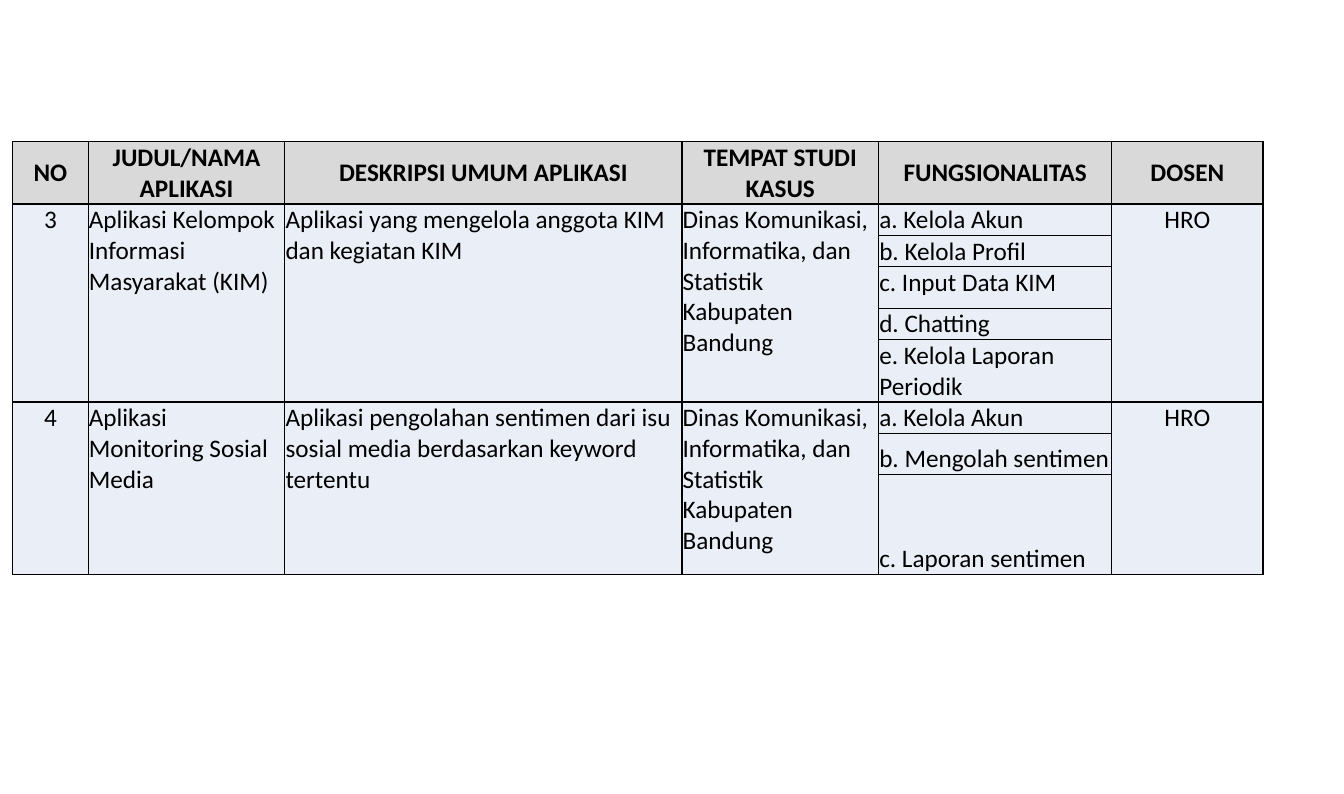
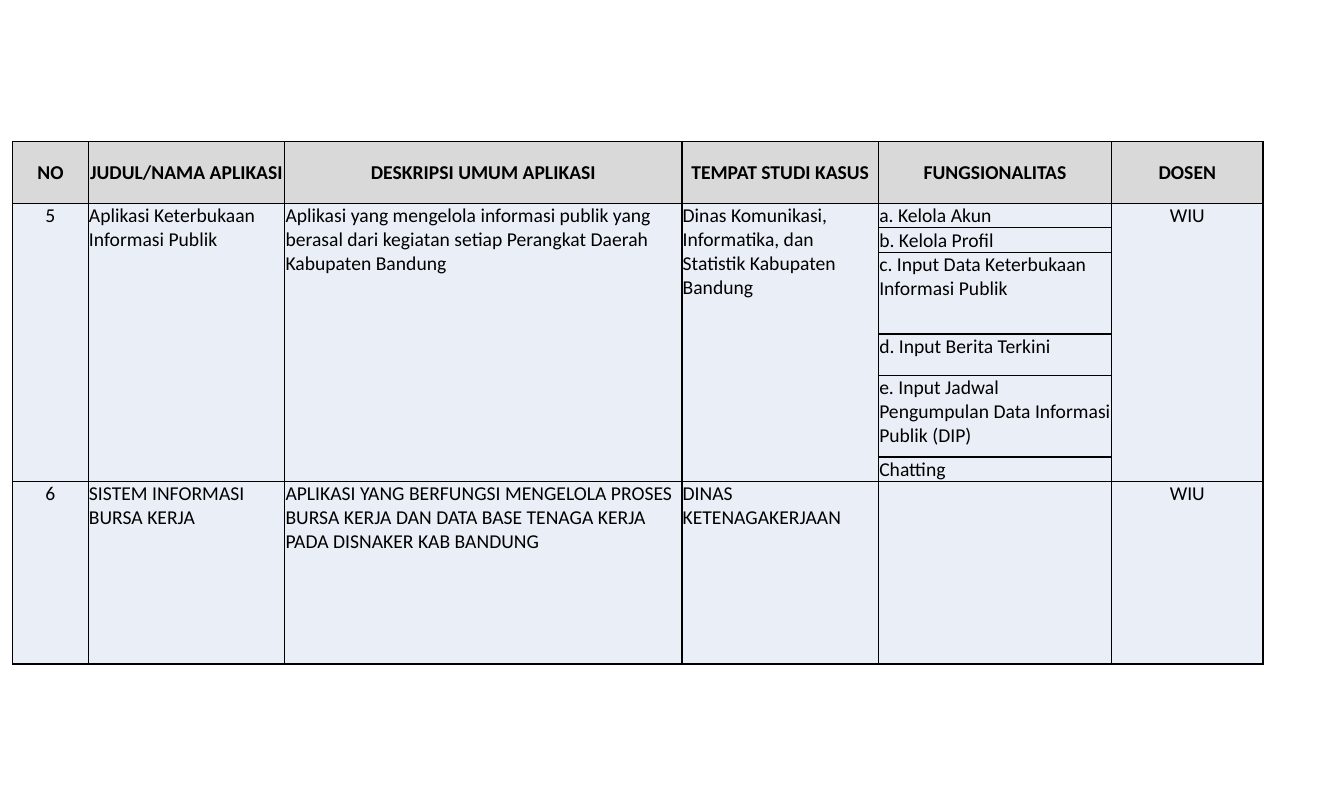
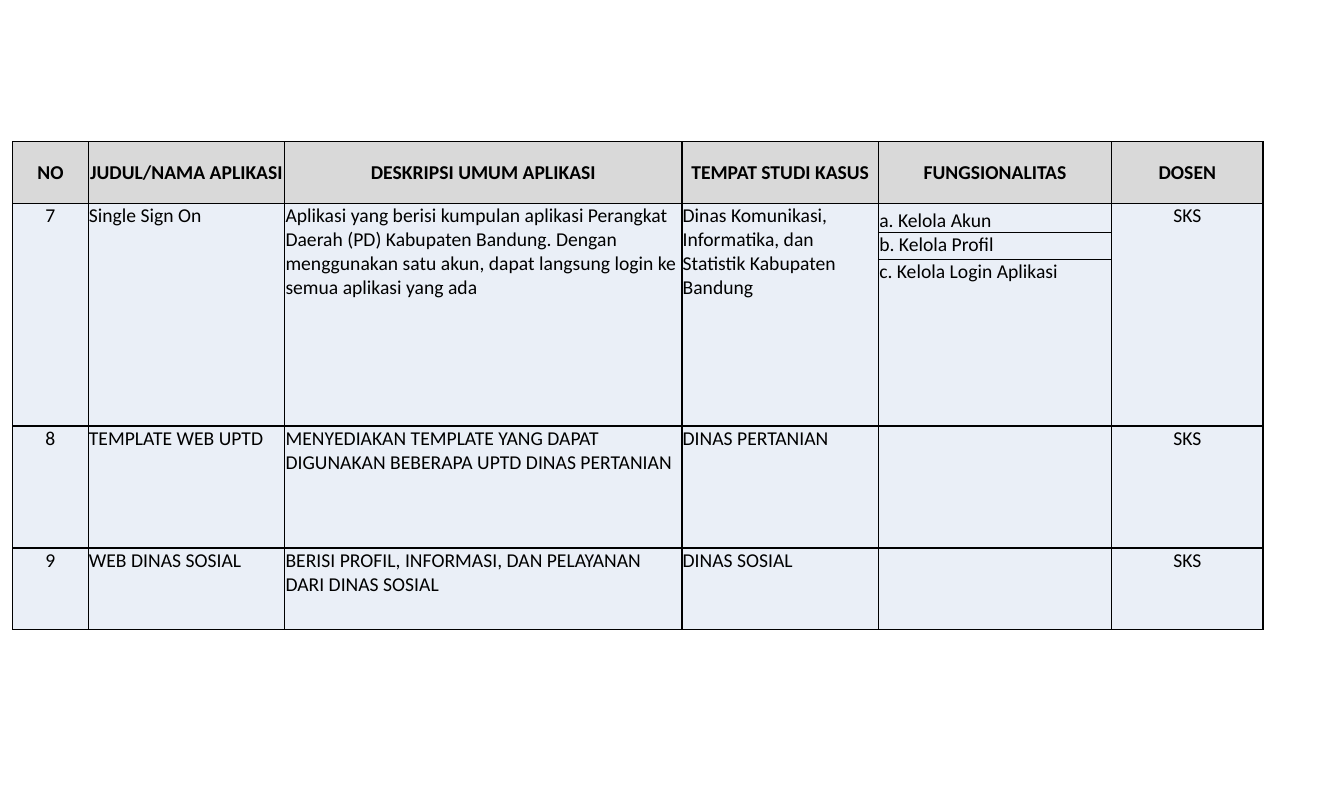
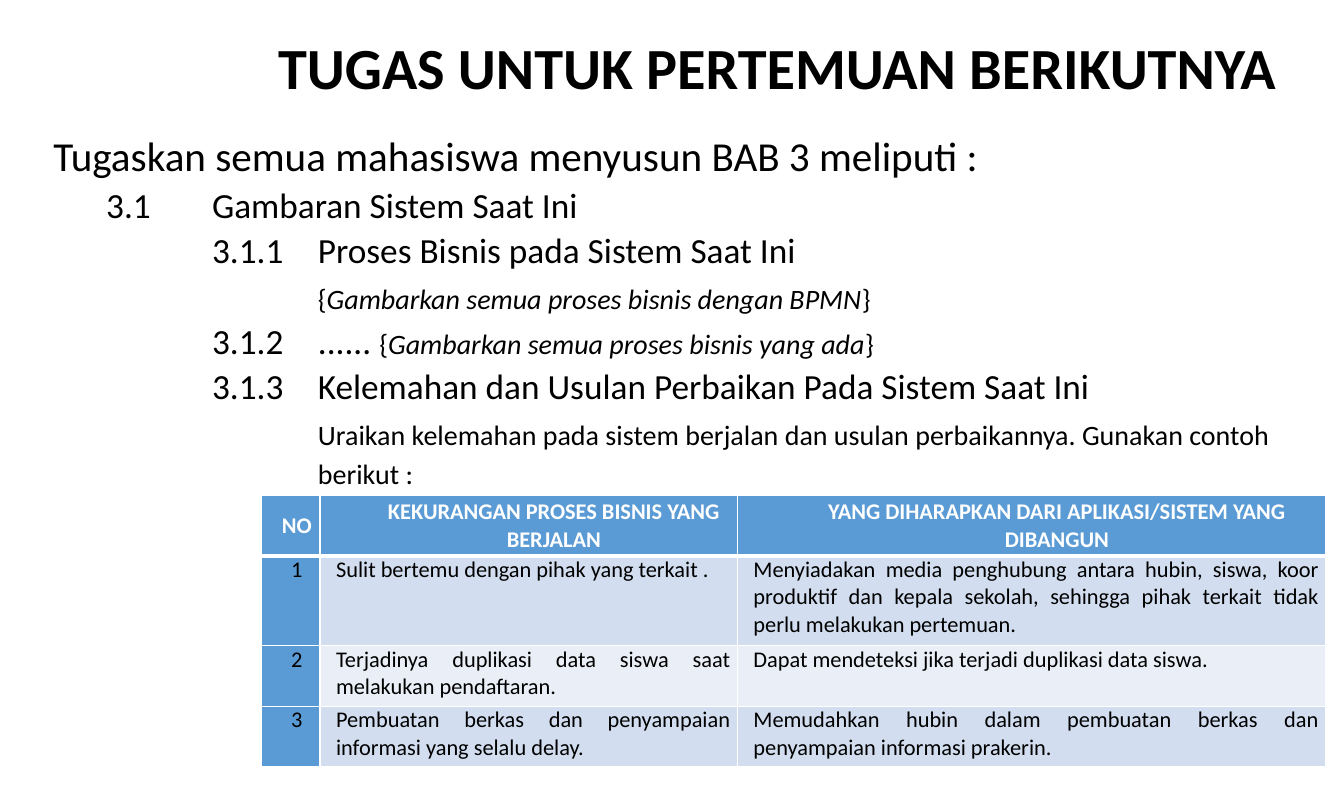
from lxml import etree
from pptx import Presentation
from pptx.dml.color import RGBColor
from pptx.enum.text import MSO_ANCHOR, PP_ALIGN
from pptx.oxml.ns import qn
from pptx.util import Inches, Pt

TOP, MIDDLE, BOTTOM = MSO_ANCHOR.TOP, MSO_ANCHOR.MIDDLE, MSO_ANCHOR.BOTTOM
LEFT, CENTER, JUSTIFY = PP_ALIGN.LEFT, PP_ALIGN.CENTER, PP_ALIGN.JUSTIFY

SCALE = 1.05
WIDTH, HEIGHT = 40 / 3, 7.5 * SCALE
ROW, ROW_EDGE = 0.2, 0.01
TAB = SCALE
FONT = "Calibri"
COLORS = {
    "text": "000000",
    "white": "FFFFFF",
    "grid": "000000",
    "header": "D9D9D9",
    "light": "EAEFF7",
    "band": "D2DEEF",
    "accent": "5B9BD5",
}
THIN_INSETS = (0.5, 0.5, 0.5, 0)
WIDE_INSETS = (5, 0, 5, 0)

APPLICATION_COLUMNS = (5.63, 14.63, 29.55, 14.63, 17.35, 11.25)
APPLICATION_HEADERS = (
    "NO", "JUDUL/NAMA APLIKASI", "DESKRIPSI UMUM APLIKASI",
    "TEMPAT STUDI KASUS", "FUNGSIONALITAS", "DOSEN",
)
FUNCTION_COLUMN = 4
DISKOMINFO = "Dinas Komunikasi, Informatika, dan Statistik Kabupaten Bandung"

APPLICATION_SLIDES = [
    (18, [
        (("3", "Aplikasi Kelompok Informasi Masyarakat (KIM)",
          "Aplikasi yang mengelola anggota KIM dan kegiatan KIM",
          DISKOMINFO, "HRO"),
         [("a. Kelola Akun", 1, TOP), ("b. Kelola Profil", 1, TOP),
          ("c. Input Data KIM", 2, TOP), ("d. Chatting", 1, TOP),
          ("e. Kelola Laporan Periodik", 3, TOP)]),
        (("4", "Aplikasi Monitoring Sosial Media",
          "Aplikasi pengolahan sentimen dari isu sosial media "
          "berdasarkan keyword tertentu",
          DISKOMINFO, "HRO"),
         [("a. Kelola Akun", 1, TOP), ("b. Mengolah sentimen", 2, BOTTOM),
          ("c. Laporan sentimen", 4.9, BOTTOM)]),
    ]),
    (14, [
        (("5", "Aplikasi Keterbukaan Informasi Publik",
          "Aplikasi yang mengelola informasi publik yang berasal dari "
          "kegiatan setiap Perangkat Daerah Kabupaten Bandung",
          DISKOMINFO, "WIU"),
         [("a. Kelola Akun", 1, TOP), ("b. Kelola Profil", 1, TOP),
          ("c. Input Data Keterbukaan Informasi Publik", 4, TOP),
          ("d. Input Berita Terkini", 2, TOP),
          ("e. Input Jadwal Pengumpulan Data Informasi Publik (DIP)", 4, TOP),
          ("Chatting", 1, TOP)]),
        (("6", "SISTEM INFORMASI BURSA KERJA",
          "APLIKASI YANG BERFUNGSI MENGELOLA PROSES BURSA KERJA DAN "
          "DATA BASE TENAGA KERJA PADA DISNAKER KAB BANDUNG",
          "DINAS KETENAGAKERJAAN", "WIU"),
         [("", 9, TOP)]),
    ]),
    (14, [
        (("7", "Single Sign On",
          "Aplikasi yang berisi kumpulan aplikasi Perangkat Daerah (PD) "
          "Kabupaten Bandung. Dengan menggunakan satu akun, dapat langsung "
          "login ke semua aplikasi yang ada",
          DISKOMINFO, "SKS"),
         [("a. Kelola Akun", 1.4, BOTTOM), ("b. Kelola Profil", 1.3, TOP),
          ("c. Kelola Login Aplikasi", 8.2, TOP)]),
        (("8", "TEMPLATE WEB UPTD",
          "MENYEDIAKAN TEMPLATE YANG DAPAT DIGUNAKAN BEBERAPA UPTD "
          "DINAS PERTANIAN",
          "DINAS PERTANIAN", "SKS"),
         [("", 6, TOP)]),
        (("9", "WEB DINAS SOSIAL",
          "BERISI PROFIL, INFORMASI, DAN PELAYANAN DARI DINAS SOSIAL",
          "DINAS SOSIAL", "SKS"),
         [("", 4, TOP)]),
    ]),
]

OUTLINE = [
    (0, 0, 0, 0, [("Tugaskan semua mahasiswa menyusun BAB 3 meliputi :", 29.4, False)]),
    (1, 1, 5.2, 0, [("3.1\tGambaran Sistem Saat Ini", 25.2, False)]),
    (2, 1, 5.2, 0, [("3.1.1\tProses Bisnis pada Sistem Saat Ini", 25.2, False)]),
    (2, 0, 9.7, 1.2, [("{", 20, False),
                      ("Gambarkan semua proses bisnis dengan BPMN", 20, True),
                      ("}", 20, False)]),
    (2, 1, 5.2, 0, [("3.1.2\t...... ", 25.2, False), ("{", 20, False),
                    ("Gambarkan semua proses bisnis yang ada", 20, True),
                    ("}", 20, False)]),
    (2, 1, 5.2, 0, [("3.1.3\tKelemahan dan Usulan Perbaikan Pada Sistem Saat Ini",
                     25.2, False)]),
    (2, 0, 9.7, 1.2, [("Uraikan kelemahan pada sistem berjalan dan usulan "
                       "perbaikannya. Gunakan contoh", 20, False)]),
    (2, 0, 5.2, 0, [("berikut :", 20, False)]),
]

PROBLEM_COLUMNS = (4.35, 31.06, 43.8)
PROBLEM_ROWS = (2.95, 4.4, 2.95, 2.95)
PROBLEMS = [
    ("NO", "KEKURANGAN PROSES BISNIS YANG BERJALAN",
     "YANG DIHARAPKAN DARI APLIKASI/SISTEM YANG DIBANGUN"),
    ("1", "Sulit bertemu dengan pihak yang terkait .",
     "Menyiadakan media penghubung antara hubin, siswa, koor produktif dan "
     "kepala sekolah, sehingga pihak terkait tidak perlu melakukan pertemuan."),
    ("2", "Terjadinya duplikasi data siswa saat melakukan pendaftaran.",
     "Dapat mendeteksi jika terjadi duplikasi data siswa."),
    ("3", "Pembuatan berkas dan penyampaian informasi yang selalu delay.",
     "Memudahkan hubin dalam pembuatan berkas dan penyampaian informasi prakerin."),
]


def across(percent):
    return Inches(WIDTH * percent / 100)


def down(percent):
    return Inches(HEIGHT * percent / 100)


def add_run(paragraph, text, size, color="text", bold=False, italic=False):
    run = paragraph.add_run()
    run.text = text
    run.font.name = FONT
    run.font.size = Pt(size)
    run.font.bold = bold
    run.font.italic = italic
    run.font.color.rgb = RGBColor.from_string(COLORS[color])


def set_indent(paragraph, left, hanging=0):
    properties = paragraph._p.get_or_add_pPr()
    properties.set("marL", str(Inches(left)))
    properties.set("indent", str(-Inches(hanging)))


def add_text_box(slide, left, top, width, height, anchor=TOP):
    shape = slide.shapes.add_textbox(across(left), down(top), across(width), down(height))
    frame = shape.text_frame
    frame.word_wrap = True
    frame.vertical_anchor = anchor
    return frame


def add_table(slide, left, top, columns, rows):
    heights = [Inches(units * ROW + ROW_EDGE) for units in rows]
    widths = [across(percent) for percent in columns]
    shape = slide.shapes.add_table(len(rows), len(columns), across(left), down(top),
                                   sum(widths), sum(heights))
    table = shape.table
    table.first_row = False
    table.horz_banding = False
    for column, width in zip(table.columns, widths):
        column.width = width
    for row, height in zip(table.rows, heights):
        row.height = height
    return table


def style_cell(cell, fill, border, insets, thick=""):
    cell.fill.solid()
    cell.fill.fore_color.rgb = RGBColor.from_string(COLORS[fill])
    (cell.margin_left, cell.margin_top,
     cell.margin_right, cell.margin_bottom) = map(Pt, insets)
    properties = cell._tc.get_or_add_tcPr()
    for position, side in enumerate("LRTB"):
        line = etree.Element(qn("a:ln" + side), w=str(Pt(3 if side == thick else 1)))
        solid = etree.SubElement(line, qn("a:solidFill"))
        etree.SubElement(solid, qn("a:srgbClr"), val=COLORS[border])
        properties.insert(position, line)


def write_cell(cell, text, size, align=LEFT, anchor=TOP, color="text",
               bold=False, indent=0):
    cell.vertical_anchor = anchor
    paragraph = cell.text_frame.paragraphs[0]
    paragraph.alignment = align
    if indent:
        set_indent(paragraph, indent)
    if text:
        add_run(paragraph, text, size, color, bold)


def add_application_group(table, first, details, functions, size):
    last = first + len(functions) - 1
    columns = [index for index in range(len(APPLICATION_COLUMNS))
               if index != FUNCTION_COLUMN]
    for column, text in zip(columns, details):
        cell = table.cell(first, column)
        if last > first:
            cell.merge(table.cell(last, column))
        align = CENTER if column in (columns[0], columns[-1]) else LEFT
        write_cell(cell, text, size, align)
    for row, (text, _, anchor) in enumerate(functions, first):
        write_cell(table.cell(row, FUNCTION_COLUMN), text, size, anchor=anchor)
    return last + 1


def add_application_slide(slide, size, groups):
    rows = [3] + [units for _, functions in groups for _, units, _ in functions]
    table = add_table(slide, 0.94, 17.85, APPLICATION_COLUMNS, rows)
    for row in range(len(rows)):
        for column in range(len(APPLICATION_COLUMNS)):
            style_cell(table.cell(row, column), "light" if row else "header",
                       "grid", THIN_INSETS)
    for column, text in enumerate(APPLICATION_HEADERS):
        write_cell(table.cell(0, column), text, size, CENTER, MIDDLE, bold=True)
    row = 1
    for details, functions in groups:
        row = add_application_group(table, row, details, functions, size)


def add_title(slide, text):
    paragraph = add_text_box(slide, 18.53, 2.8, 78.62, 12.2, MIDDLE).paragraphs[0]
    paragraph.alignment = CENTER
    paragraph.line_spacing = 0.9
    add_run(paragraph, text, 41.6, bold=True)


def add_outline(slide):
    frame = add_text_box(slide, 3.23, 16.52, 93.92, 73.7)
    for index, (level, hanging, before, after, runs) in enumerate(OUTLINE):
        paragraph = frame.add_paragraph() if index else frame.paragraphs[0]
        paragraph.line_spacing = 0.9
        paragraph.space_before = Pt(before)
        paragraph.space_after = Pt(after)
        if level:
            set_indent(paragraph, TAB * (level + 0.5), TAB * hanging)
        for text, size, italic in runs:
            add_run(paragraph, text, size, italic=italic)


def add_problem_table(slide):
    table = add_table(slide, 19.46, 62.42, PROBLEM_COLUMNS, PROBLEM_ROWS)
    for row, texts in enumerate(PROBLEMS):
        header = row == 0
        thick = {0: "B", 1: "T"}.get(row, "")
        band = "band" if row % 2 else "light"
        for column, text in enumerate(texts):
            cell = table.cell(row, column)
            number = column == 0
            style_cell(cell, "accent" if header or number else band, "white",
                       WIDE_INSETS, thick)
            indent = 0.12 if number else 0.5 if header else 0.09
            write_cell(cell, text, 16, CENTER if header or number else JUSTIFY,
                       MIDDLE if header else TOP, "white" if header else "text",
                       header, indent)


def main():
    presentation = Presentation()
    presentation.slide_width = Inches(WIDTH)
    presentation.slide_height = Inches(HEIGHT)
    blank = presentation.slide_layouts[6]
    for size, groups in APPLICATION_SLIDES:
        add_application_slide(presentation.slides.add_slide(blank), size, groups)
    slide = presentation.slides.add_slide(blank)
    add_title(slide, "TUGAS UNTUK PERTEMUAN BERIKUTNYA")
    add_outline(slide)
    add_problem_table(slide)
    presentation.save("out.pptx")


if __name__ == "__main__":
    main()
